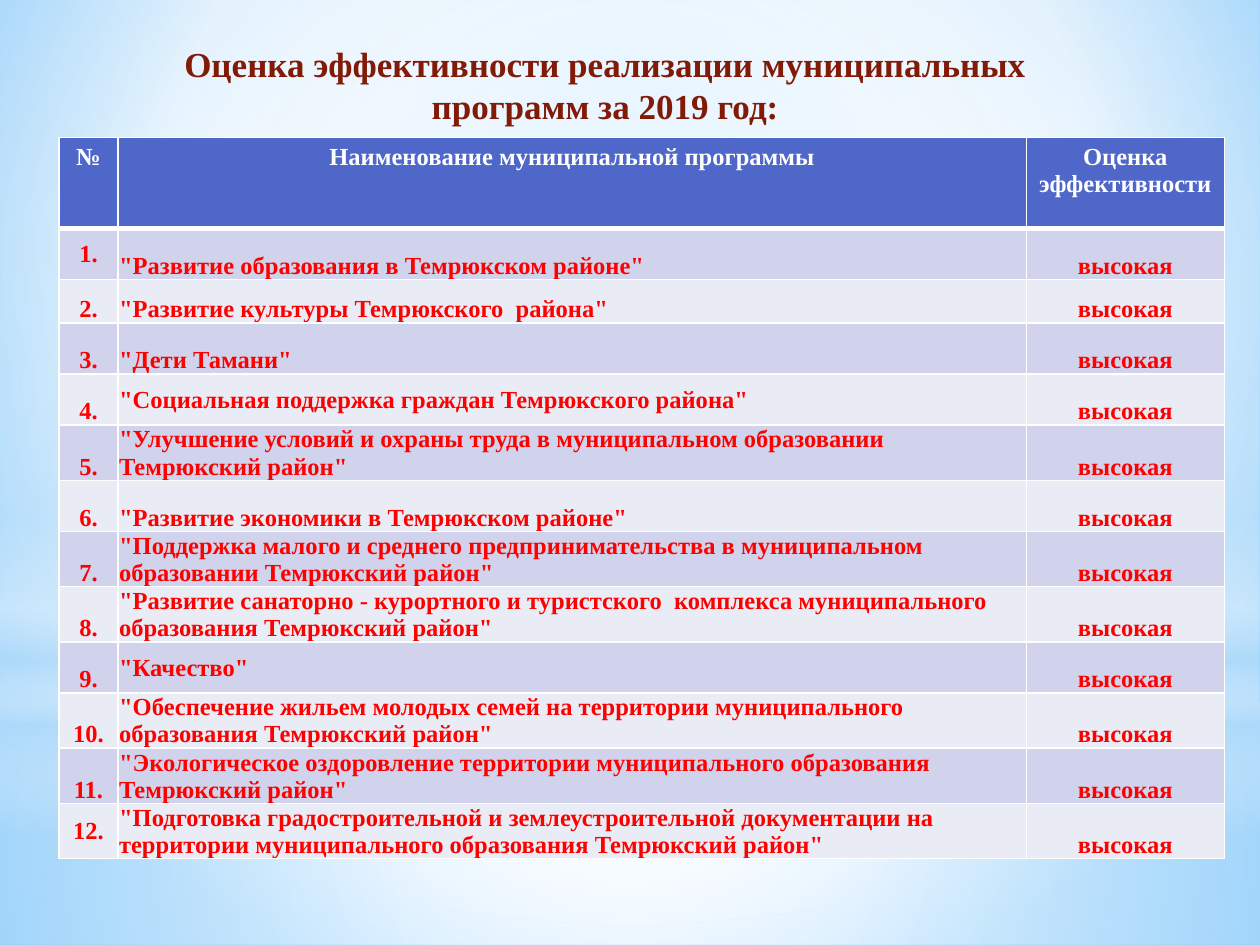
from lxml.etree import SubElement
from pptx import Presentation
from pptx.dml.color import RGBColor
from pptx.enum.shapes import MSO_SHAPE as Preset
from pptx.enum.text import MSO_ANCHOR as Anchor, PP_ALIGN as Align
from pptx.oxml.ns import qn
from pptx.util import Cm, Pt

COLORS = {
    "white": "FFFFFF", "haze": "B4DCFA", "sky": "9ED5FF", "deep sky": "5BB9FF",
    "header": "4E67C8", "odd row": "D0D3EB", "even row": "E9EBF5",
    "title": "821A08", "entry": "FF0000",
}
FONT = "Times New Roman"
TITLE = "Оценка эффективности реализации муниципальных программ за 2019 год:"
HEADINGS = ["№", "Наименование муниципальной программы", "Оценка эффективности"]
RATING = "высокая"
# Programme name, vertical anchor of its number, vertical anchor of the name
PROGRAMMES = [
    ('"Развитие образования в Темрюкском районе"', Anchor.MIDDLE, Anchor.BOTTOM),
    ('"Развитие культуры Темрюкского  района"', Anchor.BOTTOM, Anchor.BOTTOM),
    ('"Дети Тамани"', Anchor.BOTTOM, Anchor.BOTTOM),
    ('"Социальная поддержка граждан Темрюкского района"', Anchor.BOTTOM, Anchor.MIDDLE),
    ('"Улучшение условий и охраны труда в муниципальном образовании Темрюкский район"',
     Anchor.BOTTOM, Anchor.BOTTOM),
    ('"Развитие экономики в Темрюкском районе"', Anchor.BOTTOM, Anchor.BOTTOM),
    ('"Поддержка малого и среднего предпринимательства в муниципальном образовании '
     'Темрюкский район"', Anchor.BOTTOM, Anchor.MIDDLE),
    ('"Развитие санаторно - курортного и туристского  комплекса муниципального '
     'образования Темрюкский район"', Anchor.BOTTOM, Anchor.MIDDLE),
    ('"Качество"', Anchor.BOTTOM, Anchor.MIDDLE),
    ('"Обеспечение жильем молодых семей на территории муниципального образования '
     'Темрюкский район"', Anchor.BOTTOM, Anchor.MIDDLE),
    ('"Экологическое оздоровление территории муниципального образования '
     'Темрюкский район"', Anchor.BOTTOM, Anchor.MIDDLE),
    ('"Подготовка градостроительной и землеустроительной документации на территории '
     'муниципального образования Темрюкский район"', Anchor.MIDDLE, Anchor.BOTTOM),
]
COLUMN_WIDTHS = [1.19, 18.31, 3.99]
HEADER_HEIGHT, ROW_HEIGHT = 1.83, 1.03
SPECIAL_HEIGHTS = {2: 0.88, 8: 0.99}

# Backdrop layers: preset, top, height, stops (position, colour, opacity), radial focus
CENTRE = (50, 50, 50, 50)
LAYERS = [
    (Preset.RECTANGLE, 14.17, 4.88,
     [(0, "white", 91), (37, "white", 76), (100, "haze", 79)], CENTRE),
    (Preset.RECTANGLE, 0, 14.17,
     [(0, "white", 89), (48, "white", 62), (100, "haze", 79)], CENTRE),
    (Preset.RECTANGLE, 10.46, 6.35,
     [(0, "white", 0), (29, "white", 30), (45, "haze", 40), (55, "white", 26),
      (65, "haze", 60), (100, "white", 0)], None),
    (Preset.OVAL, 4.45, 14.17, [(0, "white", 100), (56, "white", 0)], CENTRE),
]
SKY_STOPS = [(0, "sky", 100), (60, "white", 100), (100, "deep sky", 100)]
SKY_FOCUS = (20, 10, 20, 60)


def add_color(parent, color, opacity=100):
    node = SubElement(parent, qn("a:srgbClr"), val=COLORS[color])
    if opacity < 100:
        SubElement(node, qn("a:alpha"), val=str(opacity * 1000))


def set_gradient(properties, stops, focus):
    """Turn the solid fill of an element into a radial or a top-down gradient."""
    fill = properties.find(qn("a:solidFill"))
    fill.clear()
    fill.tag = qn("a:gradFill")
    gradient = SubElement(properties, qn("a:gradFill"), rotWithShape="1")
    properties.replace(fill, gradient)
    stop_list = SubElement(gradient, qn("a:gsLst"))
    for position, color, opacity in stops:
        add_color(SubElement(stop_list, qn("a:gs"), pos=str(position * 1000)), color, opacity)
    if focus is None:
        SubElement(gradient, qn("a:lin"), ang="5400000", scaled="0")
    else:
        radial = SubElement(gradient, qn("a:path"), path="circle")
        SubElement(radial, qn("a:fillToRect"),
                   {side: str(share * 1000) for side, share in zip("ltrb", focus)})


def write(frame, text, size=14, color="entry", align=Align.CENTER):
    frame.word_wrap = True
    paragraph = frame.paragraphs[0]
    paragraph.alignment = align
    run = paragraph.add_run()
    run.text = text
    run.font.name, run.font.size, run.font.bold = FONT, Pt(size), True
    run.font.color.rgb = RGBColor.from_string(COLORS[color])


def style_cell(cell, fill, top=1, bottom=1):
    properties = cell._tc.get_or_add_tcPr()
    for side, width in (("L", 1), ("R", 1), ("T", top), ("B", bottom)):
        line = SubElement(properties, qn(f"a:ln{side}"), w=str(Pt(width)))
        add_color(SubElement(line, qn("a:solidFill")), "white")
    cell.fill.solid()
    cell.fill.fore_color.rgb = RGBColor.from_string(COLORS[fill])


deck = Presentation()
deck.slide_width, deck.slide_height = Cm(25.4), Cm(19.05)
slide = deck.slides.add_slide(deck.slide_layouts[6])

# Backdrop
slide.background.fill.solid()
set_gradient(slide.element.find(".//" + qn("p:bgPr")), SKY_STOPS, SKY_FOCUS)
for preset, top, height, stops, focus in LAYERS:
    layer = slide.shapes.add_shape(preset, 0, Cm(top), deck.slide_width, Cm(height))
    layer.shadow.inherit = False
    layer.line.fill.background()
    layer.fill.solid()
    set_gradient(layer.element.spPr, stops, focus)

# Programme table
heights = [HEADER_HEIGHT] + [SPECIAL_HEIGHTS.get(number, ROW_HEIGHT)
                             for number in range(1, len(PROGRAMMES) + 1)]
ratings = slide.shapes.add_table(
    len(heights), len(HEADINGS), Cm(1.19), Cm(2.77),
    Cm(sum(COLUMN_WIDTHS)), Cm(sum(heights))).table
for column, width in zip(ratings.columns, COLUMN_WIDTHS):
    column.width = Cm(width)
for row, height in zip(ratings.rows, heights):
    row.height = Cm(height)

for cell, heading in zip(ratings.rows[0].cells, HEADINGS):
    style_cell(cell, "header", bottom=3)
    write(cell.text_frame, heading, color="white")

for number, (name, number_anchor, name_anchor) in enumerate(PROGRAMMES, 1):
    entries = [
        (f"{number}.", number_anchor, Align.CENTER),
        (name, name_anchor, Align.LEFT),
        (RATING, Anchor.BOTTOM, Align.CENTER),
    ]
    for cell, (text, anchor, align) in zip(ratings.rows[number].cells, entries):
        style_cell(cell, "odd row" if number % 2 else "even row", top=3 if number == 1 else 1)
        cell.margin_left = cell.margin_right = cell.margin_top = Cm(0.02)
        cell.margin_bottom = 0
        cell.vertical_anchor = anchor
        write(cell.text_frame, text, align=align)

# Title
title = slide.shapes.add_textbox(Cm(2.18), Cm(0.74), Cm(20.04), Cm(1.96))
write(title.text_frame, TITLE, size=20, color="title")

deck.save("out.pptx")
